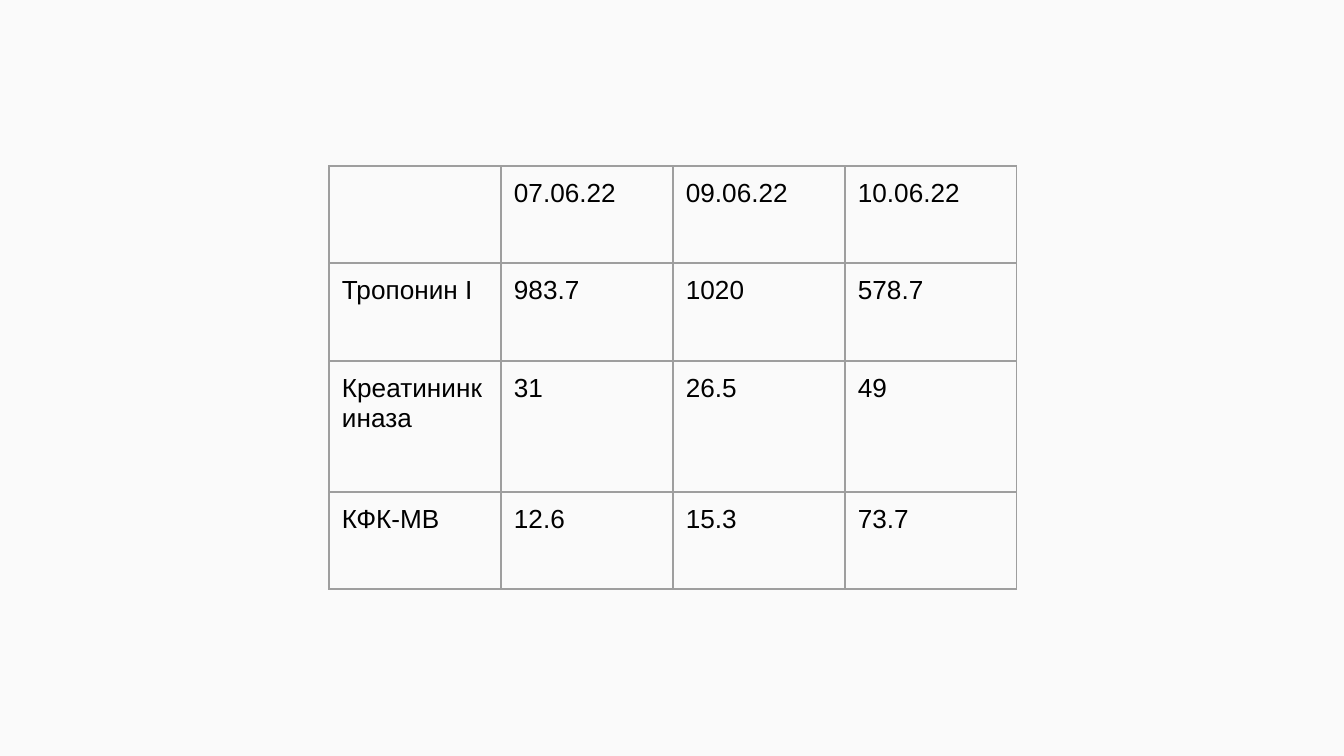
from lxml.etree import SubElement
from pptx import Presentation as Deck
from pptx.dml.color import RGBColor as Color
from pptx.oxml.ns import qn
from pptx.util import Pt

SCALE = 914400 / 134.4
COLORS = {"page": "FAFAFA", "text": "000000", "border": "9E9E9E"}
FONT = {"name": "Arial", "size": Pt(14)}
TABLE_FLAGS = {"first_row": False, "horz_banding": False}
SIDES = ("lnL", "lnR", "lnT", "lnB")


def px(length):
    return round(length * SCALE)


CELL_FORMAT = {
    "margin_left": px(13),
    "margin_right": px(13),
    "margin_top": px(13),
    "margin_bottom": px(13),
}


def apply(target, values):
    for name, value in values.items():
        setattr(target, name, value)


class SlideBuilder:
    def __init__(self, width, height):
        self.deck = Deck()
        apply(self.deck, {"slide_width": px(width), "slide_height": px(height)})
        self.page = self.deck.slides.add_slide(self.deck.slide_layouts[6])
        fill = self.page.background.fill
        fill.solid()
        fill.fore_color.rgb = Color.from_string(COLORS["page"])

    def table(self, left, top, widths, heights, rows):
        frame = self.page.shapes.add_table(
            len(heights), len(widths), px(left), px(top),
            px(sum(widths)), px(sum(heights)))
        table = frame.table
        apply(table, TABLE_FLAGS)
        for column, width in zip(table.columns, widths):
            column.width = px(width)
        for row, height, texts in zip(table.rows, heights, rows):
            row.height = px(height)
            for cell, text in zip(row.cells, texts):
                self.cell(cell, text)

    def cell(self, cell, text):
        apply(cell, CELL_FORMAT)
        self.borders(cell)
        cell.fill.background()
        para = cell.text_frame.paragraphs[0]
        apply(para.font, FONT)
        if text:
            span = para.add_run()
            span.text = text
            apply(span.font, FONT)
            span.font.color.rgb = Color.from_string(COLORS["text"])

    def borders(self, cell):
        properties = cell._tc.get_or_add_tcPr()
        for side in SIDES:
            line = SubElement(properties, qn(f"a:{side}"), w=str(Pt(0.75)))
            fill = SubElement(line, qn("a:solidFill"))
            SubElement(fill, qn("a:srgbClr"), val=COLORS["border"])


def main():
    builder = SlideBuilder(1344, 756)
    lab_results = [
        ("", "07.06.22", "09.06.22", "10.06.22"),
        ("Тропонин I", "983.7", "1020", "578.7"),
        ("Креатининкиназа", "31", "26.5", "49"),
        ("КФК-МВ", "12.6", "15.3", "73.7"),
    ]
    builder.table(329, 166, [172] * 4, [97, 98, 131, 97], lab_results)
    builder.deck.save("out.pptx")


if __name__ == "__main__":
    main()
